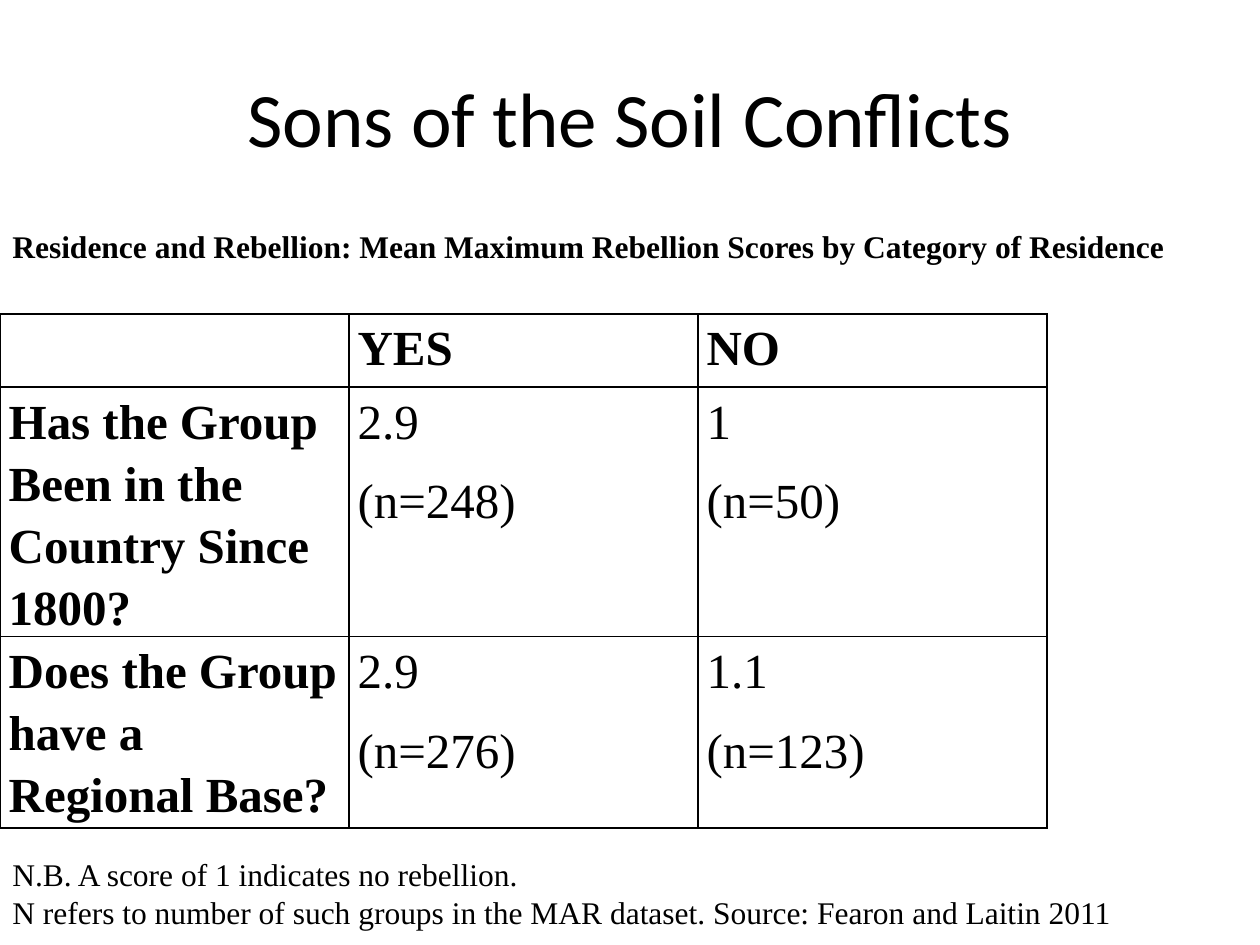
from lxml import etree
from pptx import Presentation
from pptx.dml.color import RGBColor
from pptx.enum.text import MSO_ANCHOR, MSO_AUTO_SIZE, PP_ALIGN
from pptx.oxml.ns import qn
from pptx.util import Pt

BLACK = RGBColor(0, 0, 0)
WHITE = RGBColor(255, 255, 255)
SERIF = "Times New Roman"
SANS = "Calibri"
CENTER = PP_ALIGN.CENTER
MIDDLE = MSO_ANCHOR.MIDDLE
TOP = MSO_ANCHOR.TOP
GROW = MSO_AUTO_SIZE.SHAPE_TO_FIT_TEXT
TITLE_ONLY = 5

ROWS = [
    [[], ["YES"], ["NO"]],
    [["Has the Group Been in the Country Since 1800?"], ["2.9", "(n=248)"], ["1", "(n=50)"]],
    [["Does the Group have a Regional Base?"], ["2.9", "(n=276)"], ["1.1", "(n=123)"]],
]
ROW_HEIGHTS = [42, 109.5, 109.5]


def write_lines(frame, lines, size, font=SERIF, bold=False):
    paras = []
    for index, line in enumerate(lines):
        para = frame.paragraphs[0] if index == 0 else frame.add_paragraph()
        span = para.add_run()
        span.text = line
        span.font.size = Pt(size)
        span.font.name = font
        span.font.bold = bold
        span.font.color.rgb = BLACK
        paras.append(para)
    return paras


def add_title(page, left, top, width, height):
    title = page.shapes.title
    title.left, title.top, title.width, title.height = Pt(left), Pt(top), Pt(width), Pt(height)
    title.text_frame.vertical_anchor = MIDDLE
    for para in write_lines(title.text_frame, ["Sons of the Soil Conflicts"], 44, SANS):
        para.alignment = CENTER


def add_text(page, left, top, width, height, lines, bold=False, wrap=True, anchor=TOP):
    box = page.shapes.add_textbox(Pt(left), Pt(top), Pt(width), Pt(height))
    frame = box.text_frame
    frame.word_wrap = wrap
    frame.auto_size = GROW
    frame.vertical_anchor = anchor
    write_lines(frame, lines, 18, bold=bold)


def add_borders(cell):
    properties = cell._tc.get_or_add_tcPr()
    for index, side in enumerate(("a:lnL", "a:lnR", "a:lnT", "a:lnB")):
        line = etree.Element(qn(side), w=str(Pt(1)))
        fill = etree.SubElement(line, qn("a:solidFill"))
        etree.SubElement(fill, qn("a:srgbClr"), val=str(BLACK))
        properties.insert(index, line)


def add_scores(page, left, top, width):
    shape = page.shapes.add_table(
        len(ROWS), len(ROWS[0]), Pt(left), Pt(top), Pt(width), Pt(sum(ROW_HEIGHTS)))
    table = shape.table
    table.first_row = False
    table.horz_banding = False
    for column in table.columns:
        column.width = Pt(width / len(ROWS[0]))
    for row, (texts, height) in enumerate(zip(ROWS, ROW_HEIGHTS)):
        table.rows[row].height = Pt(height)
        for column, lines in enumerate(texts):
            cell = table.cell(row, column)
            cell.fill.solid()
            cell.fill.fore_color.rgb = WHITE
            cell.margin_left = cell.margin_right = Pt(5)
            cell.margin_top = cell.margin_bottom = Pt(0)
            add_borders(cell)
            heading = row == 0 or column == 0
            for para in write_lines(cell.text_frame, lines, 28, bold=heading):
                para.line_spacing = 1.15
                para.space_after = Pt(10)


def main():
    deck = Presentation()
    deck.slide_width, deck.slide_height = Pt(720), Pt(540)
    page = deck.slides.add_slide(deck.slide_layouts[TITLE_ONLY])
    add_title(page, 36, 21.6, 648, 90)
    add_scores(page, 0, 179.3, 598.2)
    add_text(page, 0, 126, 679.7, 29,
             ["Residence and Rebellion: Mean Maximum Rebellion Scores by Category of Residence"],
             bold=True, wrap=False, anchor=MIDDLE)
    add_text(page, 0, 485.3, 720, 72.7,
             ["N.B. A score of 1 indicates no rebellion.",
              "N refers to number of such groups in the MAR dataset. Source: Fearon and Laitin 2011"])
    deck.save("out.pptx")


if __name__ == "__main__":
    main()
